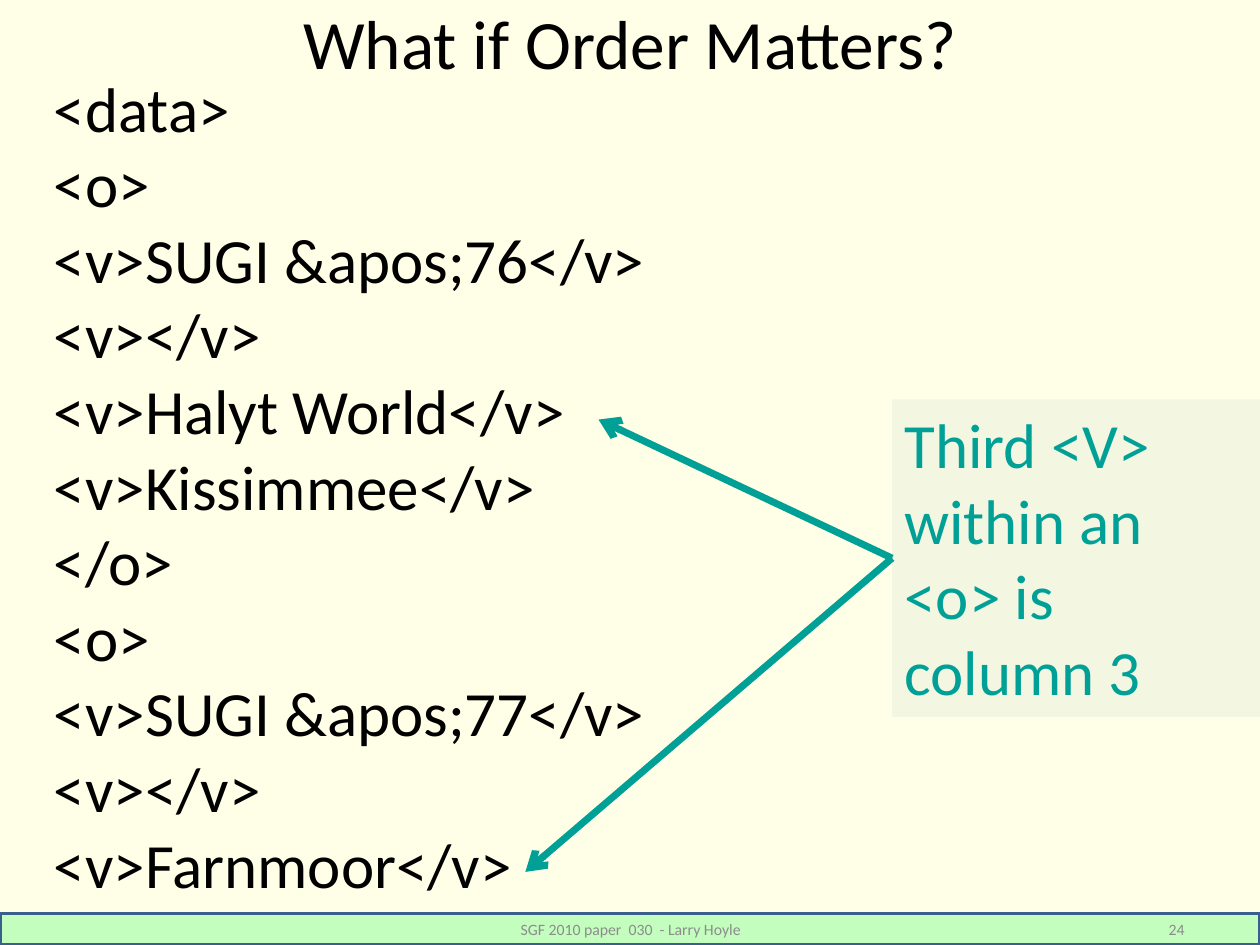
from lxml.etree import SubElement
from pptx import Presentation
from pptx.dml.color import RGBColor
from pptx.enum.shapes import MSO_CONNECTOR, MSO_SHAPE
from pptx.enum.text import MSO_ANCHOR, MSO_AUTO_SIZE, PP_ALIGN
from pptx.oxml.ns import qn
from pptx.util import Inches, Pt

COLORS = {
    "background": "FFFFE7",
    "footer": "C3FEBE",
    "footer_line": "3A5F8C",
    "footer_text": "8C8C8C",
    "text": "000000",
    "note": "EBF1DE",
    "accent": "00A096",
}
FONT = "Calibri"
XML_LINES = [
    "<data>",
    "<o>",
    "<v>SUGI &apos;76</v>",
    "<v></v>",
    "<v>Halyt World</v>",
    "<v>Kissimmee</v>",
    "</o>",
    "<o>",
    "<v>SUGI &apos;77</v>",
    "<v></v>",
    "<v>Farnmoor</v>",
]


def color(name):
    return RGBColor.from_string(COLORS[name])


def write_text(shape, text, size=36, color_name="text", align=PP_ALIGN.LEFT,
               anchor=MSO_ANCHOR.TOP, wrap=True):
    frame = shape.text_frame
    frame.word_wrap = wrap
    frame.auto_size = MSO_AUTO_SIZE.NONE
    frame.vertical_anchor = anchor
    frame.text = text
    for paragraph in frame.paragraphs:
        paragraph.alignment = align
        for run in paragraph.runs:
            run.font.name = FONT
            run.font.size = Pt(size)
            run.font.color.rgb = color(color_name)


def add_text(slide, box, text, **text_format):
    shape = slide.shapes.add_textbox(*map(Inches, box))
    write_text(shape, text, **text_format)


def add_rectangle(slide, box, fill_name):
    shape = slide.shapes.add_shape(MSO_SHAPE.RECTANGLE, *map(Inches, box))
    shape.shadow.inherit = False
    shape.fill.solid()
    shape.fill.fore_color.rgb = color(fill_name)
    return shape


def add_footer(slide, box):
    left, top, width, height = box
    bar = add_rectangle(slide, box, "footer")
    bar.line.color.rgb = color("footer_line")
    bar.line.width = Pt(2)
    small = {"size": 9, "color_name": "footer_text", "anchor": MSO_ANCHOR.MIDDLE}
    add_text(slide, (left + 3.42, top, 3.17, height),
             "SGF 2010 paper\u00a0 030\u00a0 - Larry Hoyle".replace("\u00a0", " "),
             align=PP_ALIGN.CENTER, **small)
    add_text(slide, (left + width - 2.83, top, 2.33, height), "24",
             align=PP_ALIGN.RIGHT, **small)


def add_arrow(slide, start, end):
    arrow = slide.shapes.add_connector(
        MSO_CONNECTOR.STRAIGHT, *map(Inches, (*start, *end)))
    arrow.line.color.rgb = color("accent")
    arrow.line.width = Pt(4)
    SubElement(arrow.line._get_or_add_ln(), qn("a:tailEnd"), type="arrow")
    SubElement(arrow._element.spPr, qn("a:effectLst"))


def add_note(slide, box, targets):
    left, top, width, height = box
    note = add_rectangle(slide, box, "note")
    note.line.fill.background()
    fill_color = note._element.spPr.find(qn("a:solidFill"))[0]
    SubElement(fill_color, qn("a:alpha"), val="56000")
    write_text(note, "Third <V> within an <o> is column 3", color_name="accent")
    for target in targets:
        add_arrow(slide, (left, top + height / 2), target)


def main():
    presentation = Presentation()
    presentation.slide_width = Inches(10)
    presentation.slide_height = Inches(7.5)
    slide = presentation.slides.add_slide(presentation.slide_layouts[6])
    slide.background.fill.solid()
    slide.background.fill.fore_color.rgb = color("background")
    add_footer(slide, (0, 7.25, 10, 0.25))
    add_text(slide, (0.5, 0, 9, 0.67), "What if Order Matters?", size=39.6,
             align=PP_ALIGN.CENTER, anchor=MSO_ANCHOR.MIDDLE)
    add_text(slide, (0.33, 0.5, 4.93, 6.77), "\n".join(XML_LINES), wrap=False)
    add_note(slide, (7.08, 3.17, 2.92, 2.52), [(4.17, 6.92), (4.75, 3.33)])
    presentation.save("out.pptx")


if __name__ == "__main__":
    main()
